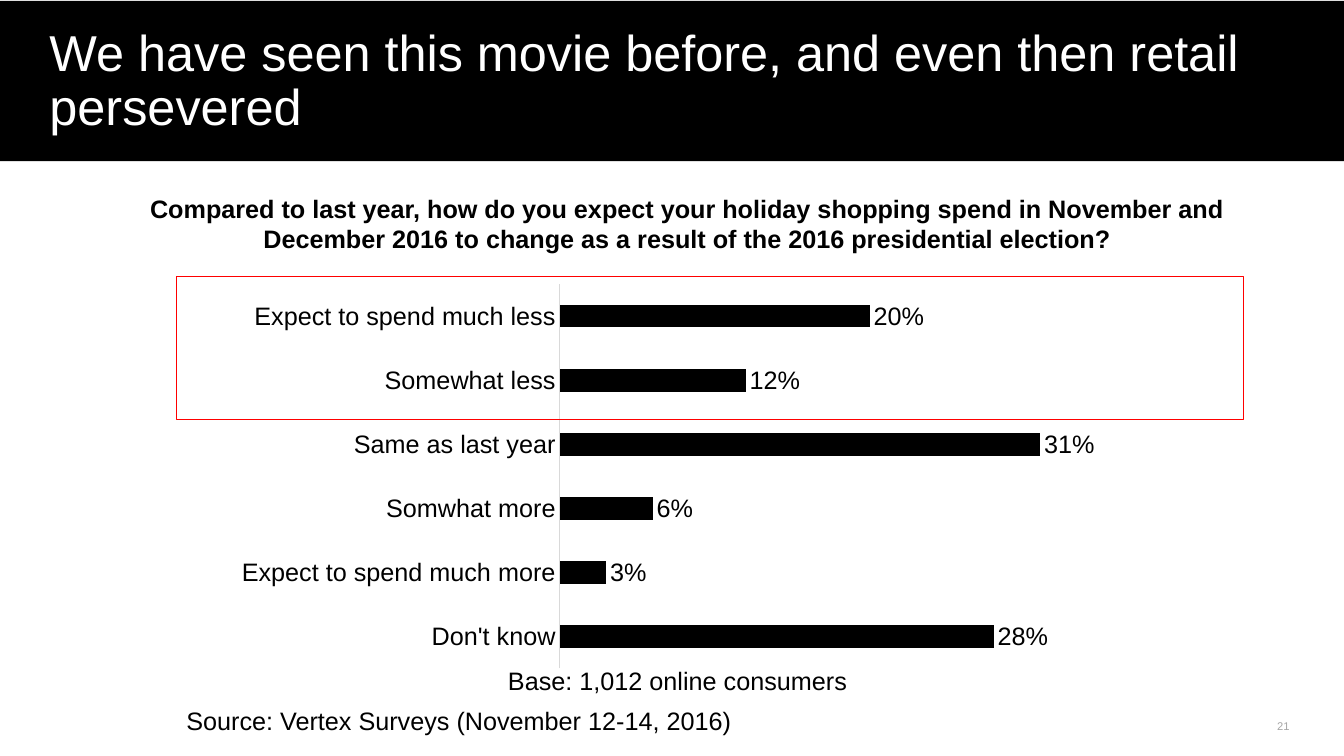
from dataclasses import dataclass

from pptx import Presentation
from pptx.chart.data import CategoryChartData
from pptx.dml.color import RGBColor
from pptx.enum.chart import XL_CHART_TYPE as ChartType
from pptx.enum.chart import XL_LABEL_POSITION as LabelPosition
from pptx.enum.chart import XL_TICK_LABEL_POSITION as TickLabels
from pptx.enum.chart import XL_TICK_MARK as TickMark
from pptx.enum.shapes import MSO_SHAPE as Preset
from pptx.enum.text import MSO_ANCHOR as Anchor
from pptx.enum.text import MSO_AUTO_SIZE as AutoSize
from pptx.enum.text import PP_ALIGN as Align
from pptx.shapes.autoshape import Shape
from pptx.slide import Slide
from pptx.text.text import Font
from pptx.util import Emu, Pt

PX = 9144  # 100 px to the inch
FONT = "Arial"
COLORS = {
    "black": "000000",
    "white": "FFFFFF",
    "red": "FF0000",
    "axis": "D9D9D9",
    "page": "A6A6A6",
}
ANSWERS = {
    "Expect to spend much less": 0.20,
    "Somewhat less": 0.12,
    "Same as last year": 0.31,
    "Somwhat more": 0.06,
    "Expect to spend much more": 0.03,
    "Don't know": 0.28,
}


@dataclass(frozen=True)
class Box:
    left: int
    top: int
    width: int
    height: int

    def emu(self) -> tuple[Emu, ...]:
        sides = (self.left, self.top, self.width, self.height)
        return tuple(Emu(side * PX) for side in sides)


@dataclass(frozen=True)
class Label:
    text: str
    box: Box
    size: int = 18
    color: str = "black"
    bold: bool = False
    wrap: bool = False
    align: Align = Align.LEFT
    anchor: Anchor = Anchor.TOP
    spacing: float = 1.0
    inset: bool = True


TITLE = Label(
    "We have seen this movie before, and even then retail persevered",
    Box(39, 23, 1295, 162), size=36, color="white", wrap=True, spacing=0.89,
)
LABELS = (
    Label(
        "Compared to last year, how do you expect your holiday shopping spend in "
        "November and December 2016 to change as a result of the 2016 "
        "presidential election?",
        Box(99, 187, 1165, 71), bold=True, wrap=True, align=Align.CENTER,
    ),
    Label("Source: Vertex Surveys (November 12-14, 2016)", Box(175, 695, 576, 40)),
    Label("Base: 1,012 online consumers", Box(494, 655, 360, 40)),
    Label(
        "21", Box(1265, 712, 14, 15), size=8, color="page", align=Align.RIGHT,
        anchor=Anchor.BOTTOM, spacing=1.25, inset=False,
    ),
)


def rgb(name: str) -> RGBColor:
    return RGBColor.from_string(COLORS[name])


def set_font(font: Font, size: int, color: str, bold: bool = False) -> None:
    font.name = FONT
    font.size = Pt(size)
    font.bold = bold
    font.color.rgb = rgb(color)


def fill_label(shape: Shape, label: Label) -> None:
    """Place a text shape and give it the label's wording and format."""
    shape.left, shape.top, shape.width, shape.height = label.box.emu()
    frame = shape.text_frame
    frame.text = label.text
    frame.word_wrap = label.wrap
    frame.auto_size = AutoSize.NONE
    frame.vertical_anchor = label.anchor
    if not label.inset:
        frame.margin_left = frame.margin_right = 0
        frame.margin_top = frame.margin_bottom = 0
    paragraph = frame.paragraphs[0]
    paragraph.alignment = label.align
    paragraph.line_spacing = label.spacing
    set_font(paragraph.font, label.size, label.color, label.bold)


def add_rectangle(slide: Slide, box: Box) -> Shape:
    shape = slide.shapes.add_shape(Preset.RECTANGLE, *box.emu())
    shape.shadow.inherit = False
    return shape


def add_title(slide: Slide) -> None:
    """Put the title on a black band."""
    title = slide.shapes.title
    fill_label(title, TITLE)
    band = add_rectangle(slide, Box(0, 1, 1333, 159))
    band.fill.solid()
    band.fill.fore_color.rgb = rgb("black")
    band.line.fill.background()
    title.element.addprevious(band.element)


def add_answer_chart(slide: Slide) -> None:
    data = CategoryChartData(number_format="0%")
    data.categories = list(ANSWERS)
    data.add_series("Series 1", list(ANSWERS.values()))
    frame = slide.shapes.add_chart(
        ChartType.BAR_CLUSTERED, *Box(222, 274, 889, 397).emu(), data
    )
    chart = frame.chart
    chart.has_title = False
    chart.has_legend = False
    set_font(chart.font, 10, "black")

    category_axis = chart.category_axis
    category_axis.reverse_order = True
    category_axis.major_tick_mark = TickMark.NONE
    category_axis.minor_tick_mark = TickMark.NONE
    category_axis.tick_label_position = TickLabels.NEXT_TO_AXIS
    category_axis.format.line.color.rgb = rgb("axis")
    category_axis.format.line.width = Pt(0.75)
    set_font(category_axis.tick_labels.font, 18, "black")

    value_axis = chart.value_axis
    value_axis.minimum_scale = 0
    value_axis.maximum_scale = 0.35
    value_axis.has_major_gridlines = False
    value_axis.visible = False

    plot = chart.plots[0]
    plot.gap_width = 182
    plot.vary_by_categories = False
    series = plot.series[0]
    series.format.fill.solid()
    series.format.fill.fore_color.rgb = rgb("black")
    labels = series.data_labels
    labels.show_value = True
    labels.number_format = "0%"
    labels.number_format_is_linked = False
    labels.position = LabelPosition.OUTSIDE_END
    set_font(labels.font, 18, "black")


def add_highlight(slide: Slide) -> None:
    """Frame the two answers that expect to spend less."""
    highlight = add_rectangle(slide, Box(175, 274, 1058, 142))
    highlight.fill.background()
    highlight.line.color.rgb = rgb("red")
    highlight.line.width = Pt(0.85)


def main() -> None:
    presentation = Presentation()
    presentation.slide_width = Emu(1333 * PX)
    presentation.slide_height = Emu(750 * PX)
    slide = presentation.slides.add_slide(presentation.slide_layouts[5])
    add_title(slide)
    add_answer_chart(slide)
    for label in LABELS:
        fill_label(slide.shapes.add_textbox(*label.box.emu()), label)
    add_highlight(slide)
    presentation.save("out.pptx")


if __name__ == "__main__":
    main()
